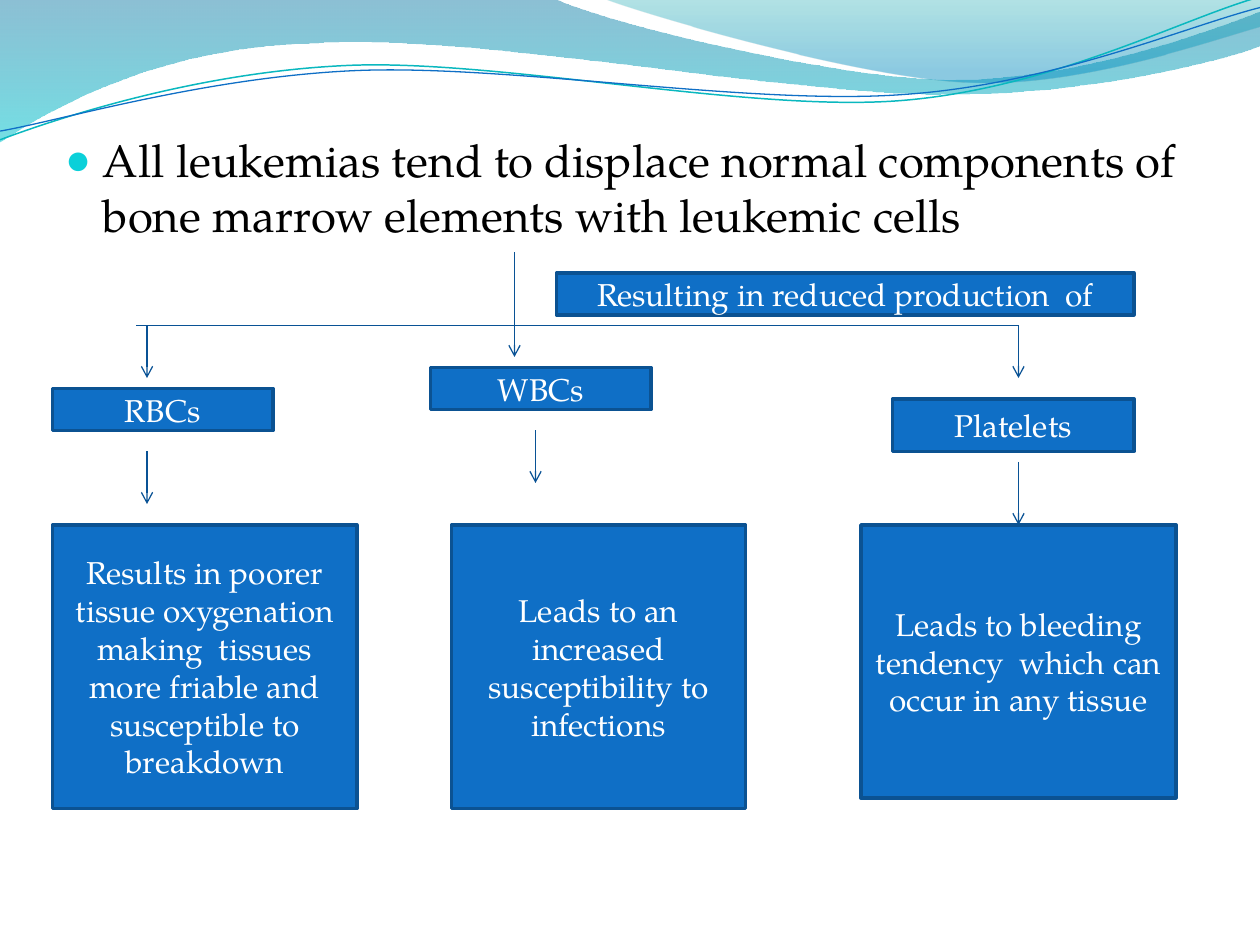
from lxml.etree import SubElement as Sub
from pptx import Presentation
from pptx.dml.color import RGBColor as Rgb
from pptx.enum.shapes import MSO_CONNECTOR as Conn, MSO_SHAPE as Shape
from pptx.enum.text import MSO_ANCHOR as Anchor, MSO_AUTO_SIZE as Auto, PP_ALIGN as Align
from pptx.oxml.ns import qn
from pptx.util import Pt

FONT = "TeX Gyre Pagella"
HEX = {"box": "0F6FC6", "edge": "0B5292", "arrow": "095295", "bullet": "0BD0D9",
       "text": "000000", "light": "FFFFFF", "teal": "0AB8BF", "blue": "0F6FC6"}

# Outlines: a pair is a line to a point, six numbers are a Bezier curve.
# Bands add gradient stops: position, colour, opacity in percent.
BANDS = [
    ([(0, 0), (316.8, -0.7),
      (342.7, 12.2, 478.1, 45.4, 545.8, 45.4), (614.2, 45.4, 689.8, 18.7, 720, 6.5),
      (720.7, 25.9),
      (707.8, 31.7, 626.4, 54.7, 537.1, 54), (447.8, 54, 275, 20.2, 185, 24.5),
      (92.9, 25.9, 33.1, 59.8, -0.7, 81.4)],
     [(0, "0074A1", 45), (1, "00C6CF", 55)]),
    ([(344.9, -0.7),
      (366.5, 7.9, 491, 44.6, 553.7, 46.8), (616.3, 49.7, 691.9, 23, 720, 15.1),
      (720, 0)],
     [(0, "00A1A9", 30), (0.8, "008BBF", 45)]),
]
WAVES = [
    ([(0, 79.9), (34.6, 67, 113.8, 41, 199.4, 37.4),
      (284.4, 33.8, 427, 64.1, 513.4, 57.6), (599.8, 51.1, 675.4, 10.8, 718.6, -1.4)],
     "teal", 0.85),
    ([(0, 74.9), (33.8, 69.1, 118.1, 43.9, 203.8, 40.3),
      (290.2, 36.7, 429.8, 60.5, 516.2, 54), (601.9, 48.2, 677.5, 15.1, 720, 4.3)],
     "blue", 0.75),
]

HEAD = ("All leukemias tend to displace normal components of "
        "bone marrow elements with leukemic cells")
# Text, left, top, width, height
BOXES = [
    ("Resulting in reduced production  of", 318, 156, 330, 24),
    ("RBCs", 30, 222, 126, 24),
    ("WBCs", 246, 210, 126, 24),
    ("Platelets", 510, 228, 138, 30),
    ("Results in poorer tissue oxygenation making  tissues more friable "
     "and susceptible to breakdown", 30, 300, 174, 162),
    ("Leads to an increased susceptibility to infections", 258, 300, 168, 162),
    ("Leads to bleeding tendency  which can occur in any tissue", 492, 300, 180, 156),
]
# Vertical arrows: x, top, bottom
ARROWS = [(294, 144, 204), (84, 186, 216), (582, 186, 216),
          (84, 258, 288), (306, 246, 276)]
BAR = (78, 186, 582, 186)
BLEED = (582, 264, 582, 300)


def write(frame, text, size=18, color="light", align=Align.CENTER):
    frame.word_wrap = True
    para = frame.paragraphs[0]
    para.alignment = align
    run = para.add_run()
    run.text = text
    run.font.name, run.font.size = FONT, Pt(size)
    run.font.color.rgb = Rgb.from_string(HEX[color])
    return para


def free(steps, close):
    """Draw an outline, then merge each curve's three points into one Bezier."""
    dots = [(Pt(s[i]), Pt(s[i + 1])) for s in steps for i in range(0, len(s), 2)]
    pen = slide.shapes.build_freeform(*dots[0])
    pen.add_line_segments(dots[1:], close=close)
    shape = pen.convert_to_shape()
    shape.shadow.inherit = False
    parts = iter(list(shape._element.iter(qn("a:lnTo"))))
    for step in steps[1:]:
        part = next(parts)
        if len(step) == 6:
            part.tag = qn("a:cubicBezTo")
            for more in (next(parts), next(parts)):
                part.append(more[0])
                more.getparent().remove(more)
    return shape


def stroke(line, color, width):
    line.color.rgb = Rgb.from_string(HEX[color])
    line.width = Pt(width)


def link(x1, y1, x2, y2, tip=True):
    line = slide.shapes.add_connector(Conn.STRAIGHT, Pt(x1), Pt(y1), Pt(x2), Pt(y2))
    stroke(line.line, "arrow", 0.75)
    if tip:
        Sub(line.line._get_or_add_ln(), qn("a:tailEnd"), type="arrow")
    Sub(line._element.spPr, qn("a:effectLst"))
    return line


def block(text, *place):
    box = slide.shapes.add_shape(Shape.RECTANGLE, *map(Pt, place))
    box.shadow.inherit = False
    box.fill.solid()
    box.fill.fore_color.rgb = Rgb.from_string(HEX["box"])
    stroke(box.line, "edge", 2)
    box.text_frame.vertical_anchor = Anchor.MIDDLE
    write(box.text_frame, text)
    return box


deck = Presentation()
deck.slide_width, deck.slide_height = Pt(720), Pt(540)
slide = deck.slides.add_slide(deck.slide_layouts[1])
title, body = slide.placeholders
title._element.getparent().remove(title._element)

# Decorative bands and waves
for steps, stops in BANDS:
    band = free(steps, True)
    band.line.fill.background()
    band.fill.gradient()
    band.fill.gradient_angle = 270
    for stop, (spot, color, clear) in zip(band.fill.gradient_stops, stops):
        stop.position = spot
        stop.color.rgb = Rgb.from_string(color)
        tint = stop._gs.find(qn("a:srgbClr"))
        Sub(tint, qn("a:alpha"), val=str(clear * 1000))
for steps, color, width in WAVES:
    wave = free(steps, False)
    wave.fill.background()
    stroke(wave.line, color, width)

# Bulleted statement, in front of the bands
slide.shapes._spTree.append(body._element)
body.left, body.top, body.width, body.height = Pt(30), Pt(72), Pt(654), Pt(402)
body.text_frame.auto_size = Auto.NONE
body.text_frame.vertical_anchor = Anchor.TOP
para = write(body.text_frame, HEAD, size=26, color="text", align=Align.LEFT)
para.space_before = Pt(5)
props = para._p.get_or_add_pPr()
props.set("marL", str(Pt(21.6)))
props.set("indent", str(-Pt(21.6)))
Sub(Sub(props, qn("a:buClr")), qn("a:srgbClr"), val=HEX["bullet"])
Sub(props, qn("a:buSzPct"), val="95000")
Sub(props, qn("a:buChar"), char="●")

# Flow chart
for x, top, end in ARROWS:
    link(x, top, x, end)
link(*BAR, tip=False)
boxes = [block(*box) for box in BOXES]
link(*BLEED).end_connect(boxes[-1], 0)

deck.save("out.pptx")
